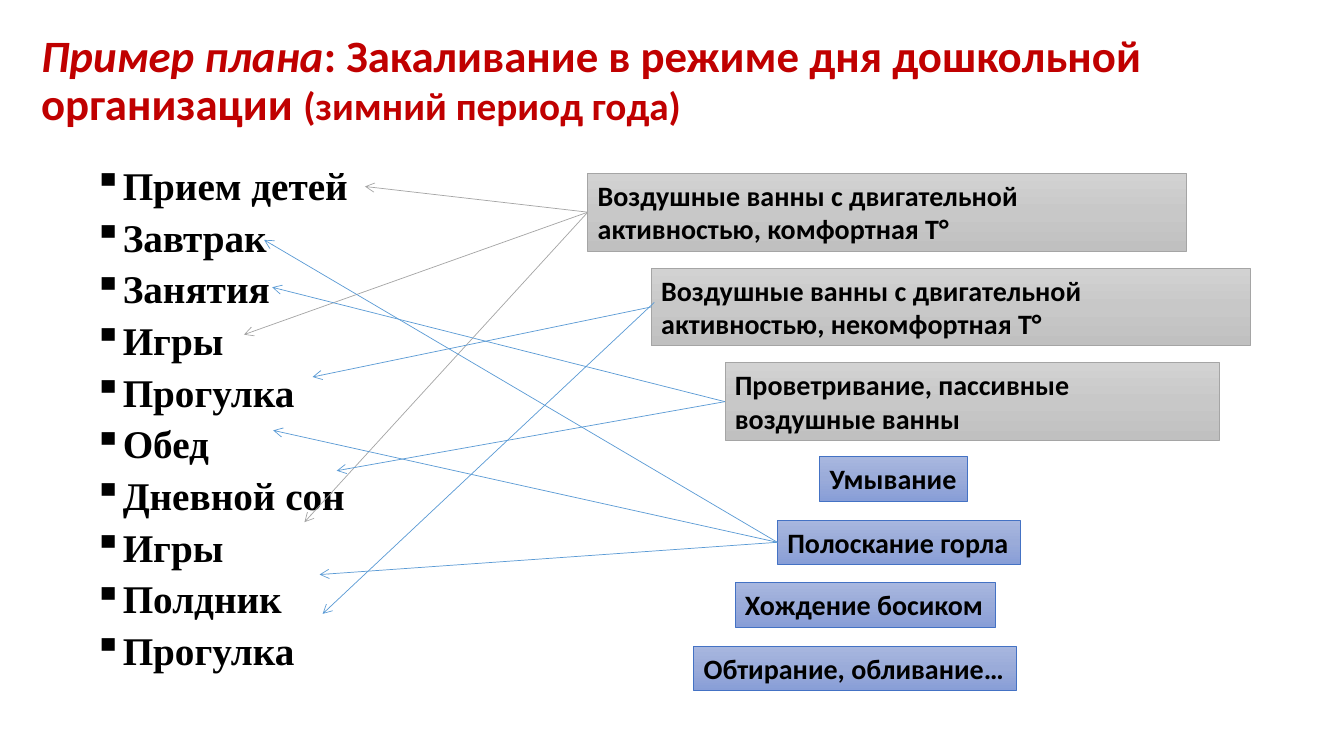
from copy import deepcopy
from dataclasses import dataclass

from lxml import etree
from pptx import Presentation
from pptx import util as u
from pptx.dml.color import RGBColor
from pptx.enum import shapes, text
from pptx.oxml.ns import qn

PX = u.Inches(1) // 100


@dataclass(frozen=True)
class Theme:
    heading: str = "C00000"
    ink: str = "000000"
    gray: str = "A5A5A5"
    gray_fill: tuple = ("D2D2D2", "C8C8C8", "C0C0C0")
    blue: str = "4472C4"
    blue_fill: tuple = ("A8B7DF", "9AABD9", "889ED7")
    arrow: str = "5B9BD5"
    sans: str = "Calibri"
    serif: str = "Times New Roman"
    title_size: int = 32
    body_size: int = 28
    box_size: int = 20
    line_width: float = 0.5


THEME = Theme()


def px(*lengths):
    return [length * PX for length in lengths]


def write_text(shape, paragraphs, size, font=THEME.sans, color=THEME.ink,
               spacing=None, before=None, bullet=None, wrap=True,
               anchor=text.MSO_ANCHOR.TOP, fit=text.MSO_AUTO_SIZE.NONE):
    frame = shape.text_frame
    frame.word_wrap = wrap
    frame.vertical_anchor = anchor
    frame.auto_size = fit
    for index, runs in enumerate(paragraphs):
        paragraph = frame.add_paragraph() if index else frame.paragraphs[0]
        paragraph.alignment = text.PP_ALIGN.LEFT
        if spacing:
            paragraph.line_spacing = spacing
        if before:
            paragraph.space_before = u.Pt(before)
        if bullet:
            properties = paragraph.runs_parent = None
            properties = paragraph._p.get_or_add_pPr()
            properties.set("marL", str(25 * PX))
            properties.set("indent", str(-25 * PX))
            etree.SubElement(properties, qn("a:buChar"), char=bullet)
        for words, changes in runs:
            run = paragraph.add_run()
            run.text = words
            run.font.name = font
            run.font.bold = True
            run.font.italic = changes.get("italic", False)
            run.font.size = u.Pt(changes.get("size", size))
            run.font.color.rgb = RGBColor.from_string(color)


def add_text(slide, place, paragraphs, **style):
    write_text(slide.shapes.add_textbox(*px(*place)), paragraphs, **style)


def add_box(slide, place, label, fill, line, wrap):
    box = slide.shapes.add_shape(shapes.MSO_SHAPE.RECTANGLE, *px(*place))
    box.shadow.inherit = False
    box.fill.gradient()
    box.fill.gradient_angle = 270
    stops = box._element.spPr.find(".//" + qn("a:gsLst"))
    stops.insert(1, deepcopy(stops[0]))
    for index, stop in enumerate(box.fill.gradient_stops):
        stop.position = index / 2
        stop.color.rgb = RGBColor.from_string(fill[index])
    box.line.color.rgb = RGBColor.from_string(line)
    box.line.width = u.Pt(THEME.line_width)
    write_text(box, [[(label, {})]], size=THEME.box_size, wrap=wrap,
               fit=text.MSO_AUTO_SIZE.SHAPE_TO_FIT_TEXT)
    return box


def add_arrow(slide, start, end, color, source=None):
    arrow = slide.shapes.add_connector(shapes.MSO_CONNECTOR.STRAIGHT,
                                       *px(*start, *end))
    if source is not None:
        arrow.begin_connect(source, 1)
    arrow.line.color.rgb = RGBColor.from_string(color)
    arrow.line.width = u.Pt(THEME.line_width)
    etree.SubElement(arrow.line._get_or_add_ln(), qn("a:tailEnd"), type="arrow")
    etree.SubElement(arrow._element.spPr, qn("a:effectLst"))


def main():
    deck = Presentation()
    deck.slide_width, deck.slide_height = px(1333, 750)
    slide = deck.slides.add_slide(deck.slide_layouts[6])

    add_text(slide, (31, 30, 1271, 103), [[
        ("Пример плана", {"italic": True}),
        (": Закаливание в режиме дня дошкольной организации ", {}),
        ("(зимний период года)", {"size": THEME.body_size}),
    ]], size=THEME.title_size, color=THEME.heading, spacing=0.9,
        anchor=text.MSO_ANCHOR.MIDDLE)

    daily_routine = ("Прием детей", "Завтрак", "Занятия", "Игры", "Прогулка",
                     "Обед", "Дневной сон", "Игры", "Полдник", "Прогулка")
    add_text(slide, (83, 164, 417, 555),
             [[(activity, {})] for activity in daily_routine],
             size=THEME.body_size, font=THEME.serif, spacing=0.8, before=10,
             bullet="▪")

    air_procedures = (
        (583, 594, "Воздушные ванны с двигательной активностью, комфортная Т°"),
        (646, 594, "Воздушные ванны с двигательной активностью, некомфортная Т°"),
        (719, 490, "Проветривание, пассивные воздушные ванны"),
    )
    comfortable, cool, airing = [
        add_box(slide, (left, 172 + 94 * row, width, 77), label,
                THEME.gray_fill, THEME.gray, True)
        for row, (left, width, label) in enumerate(air_procedures)]

    water_procedures = (
        (813, 147, "Умывание"),
        (771, 241, "Полоскание горла"),
        (729, 258, "Хождение босиком"),
        (688, 320, "Обтирание, обливание…"),
    )
    washing, gargling, barefoot, dousing = [
        add_box(slide, (left, 453 + round(62.6 * row), width, 44), label,
                THEME.blue_fill, THEME.blue, False)
        for row, (left, width, label) in enumerate(water_procedures)]

    procedure_times = (
        (comfortable, THEME.gray, ((362, 185), (242, 332), (302, 518))),
        (cool, THEME.arrow, ((310, 374),)),
        (gargling, THEME.arrow, ((262, 238), (271, 427), (317, 570))),
        (airing, THEME.arrow, ((270, 285), (334, 467))),
    )
    for procedure, color, targets in procedure_times:
        for target in targets:
            add_arrow(slide, (0, 0), target, color, procedure)
    add_arrow(slide, (649, 300), (320, 609), THEME.arrow)

    deck.save("out.pptx")


if __name__ == "__main__":
    main()
